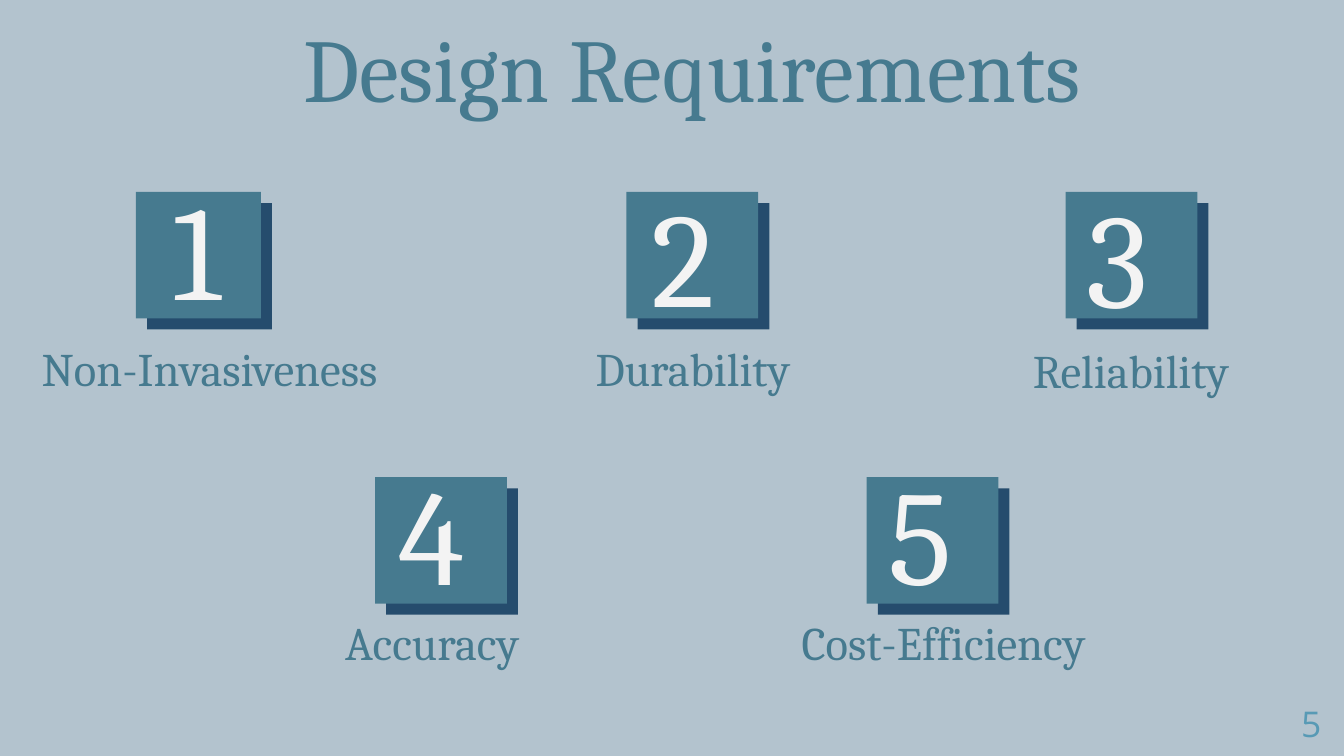
"""Build the Design Requirements slide with five numbered tiles."""
from dataclasses import dataclass

from pptx import Presentation
from pptx.dml.color import RGBColor
from pptx.enum.shapes import MSO_SHAPE
from pptx.enum.text import MSO_ANCHOR, PP_ALIGN
from pptx.util import Cm, Pt

RECTANGLE = MSO_SHAPE.RECTANGLE
TOP, MIDDLE = MSO_ANCHOR.TOP, MSO_ANCHOR.MIDDLE
LEFT, CENTER, RIGHT = PP_ALIGN.LEFT, PP_ALIGN.CENTER, PP_ALIGN.RIGHT


@dataclass(frozen=True)
class Theme:
    background: str = "B3C3CE"
    teal: str = "467A8F"
    navy: str = "254C6D"
    white: str = "F3F3F3"
    blue: str = "589AB5"
    serif: str = "Cambria"
    sans: str = "Open Sans"
    title_size: int = 48
    digit_size: int = 72
    label_size: int = 25
    page_size: int = 19


THEME = Theme()
TITLE = "Design Requirements"
PAGE_NUMBER = "5"

# Positions are centimetres: tile (left, top, width), digit (left, top),
# label (left, top, width, anchor).
REQUIREMENTS = [
    ("Non-Invasiveness", (2.57, 3.63, 2.36), (3.02, 3.35), (0.25, 6.02, 7.42, MIDDLE)),
    ("Durability", (11.84, 3.63, 2.49), (12.07, 3.48), (10.77, 6.02, 4.65, MIDDLE)),
    ("Reliability", (20.14, 3.63, 2.49), (20.29, 3.49), (19.05, 6.22, 4.65, TOP)),
    ("Accuracy", (7.09, 9.02, 2.49), (7.29, 8.74), (5.84, 11.35, 4.65, TOP)),
    ("Cost-Efficiency", (16.38, 9.02, 2.49), (16.54, 8.74), (14.53, 11.35, 6.6, TOP)),
]
TILE_HEIGHT = 2.39
SHADE_OFFSET = 0.21
DIGIT_WIDTH, DIGIT_HEIGHT = 1.73, 2.64
LABEL_HEIGHT = 1.88
INSET = 0.25


def add_block(page, left, top, width, color):
    block = page.shapes.add_shape(
        RECTANGLE, Cm(left), Cm(top), Cm(width), Cm(TILE_HEIGHT))
    block.shadow.inherit = False
    block.fill.solid()
    block.fill.fore_color.rgb = RGBColor.from_string(color)
    block.line.fill.background()


def add_text(page, text, area, size, color, align=CENTER, anchor=TOP, font=THEME.serif):
    box = page.shapes.add_textbox(*map(Cm, area))
    frame = box.text_frame
    frame.word_wrap = True
    frame.vertical_anchor = anchor
    frame.margin_left = frame.margin_right = Cm(INSET)
    frame.margin_top = frame.margin_bottom = Cm(INSET)
    frame.text = text
    para = frame.paragraphs[0]
    para.alignment = align
    span = para.runs[0]
    span.font.name = font
    span.font.size = Pt(size)
    span.font.color.rgb = RGBColor.from_string(color)


def add_requirement(page, number, label, tile, digit, caption):
    left, top, width = tile
    add_block(page, left + SHADE_OFFSET, top + SHADE_OFFSET, width, THEME.navy)
    add_block(page, left, top, width, THEME.teal)
    add_text(page, str(number), (*digit, DIGIT_WIDTH, DIGIT_HEIGHT),
             THEME.digit_size, THEME.white, LEFT, MIDDLE)
    *place, anchor = caption
    add_text(page, label, (*place, LABEL_HEIGHT),
             THEME.label_size, THEME.teal, anchor=anchor)


def main():
    deck = Presentation()
    deck.slide_width, deck.slide_height = Cm(25.4), Cm(14.29)
    page = deck.slides.add_slide(deck.slide_layouts[6])
    page.background.fill.solid()
    page.background.fill.fore_color.rgb = RGBColor.from_string(THEME.background)

    add_text(page, TITLE, (0.76, 0, 24.64, 2.92), THEME.title_size, THEME.teal)
    for number, requirement in enumerate(REQUIREMENTS, start=1):
        add_requirement(page, number, *requirement)
    add_text(page, PAGE_NUMBER, (23.7, 13.03, 1.52, 1.09),
             THEME.page_size, THEME.blue, RIGHT, font=THEME.sans)
    deck.save("out.pptx")


if __name__ == "__main__":
    main()
